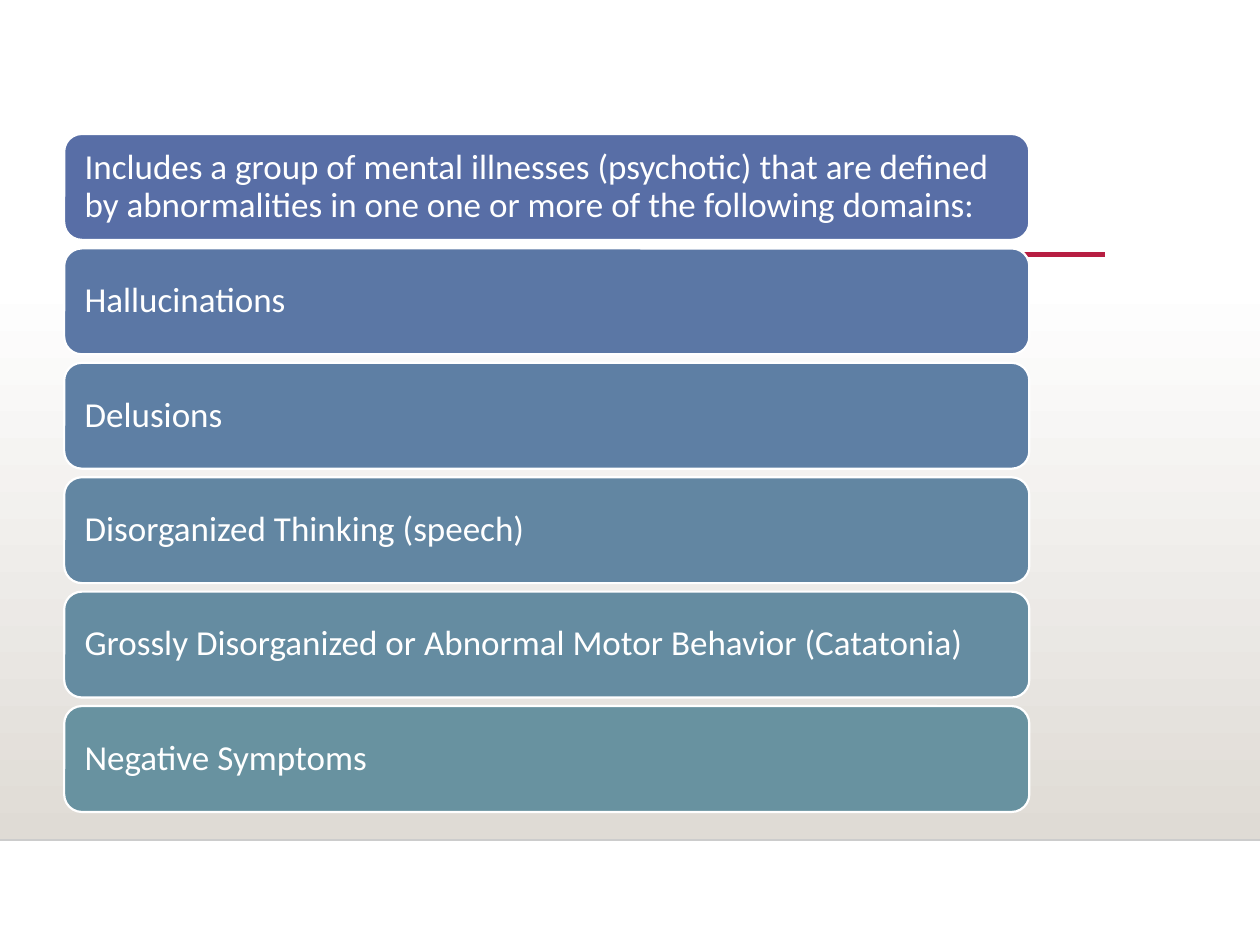
"""Build a slide that lists the domains of psychotic illness."""
from lxml.etree import SubElement
from pptx import Presentation
from pptx.dml.color import RGBColor
from pptx.enum.shapes import MSO_CONNECTOR, MSO_SHAPE
from pptx.enum.text import MSO_ANCHOR, PP_ALIGN
from pptx.oxml.ns import qn
from pptx.util import Pt

HUES = {
    "white": "FFFFFF", "sand": "DFDBD5", "edge": "CCCCCC", "red": "B71E42",
    "box1": "586EA6", "box2": "5B77A5", "box3": "5E7FA4",
    "box4": "6286A2", "box5": "658CA1", "box6": "6892A0",
}
ITEMS = [
    "Includes a group of mental illnesses (psychotic) that are defined "
    "by abnormalities in one one or more of the following domains:",
    "Hallucinations",
    "Delusions",
    "Disorganized Thinking (speech)",
    "Grossly Disorganized or Abnormal Motor Behavior (Catatonia)",
    "Negative Symptoms",
]
LEFT, TOP, WIDTH, HEIGHT, STEP = 36.7, 76.6, 551.5, 60.5, 65.38


def hue(name):
    return RGBColor.from_string(HUES[name])


def write(shape, text, *, size=20, font="Calibri", color="white", inset=8.7):
    frame = shape.text_frame
    frame.word_wrap = True
    frame.vertical_anchor = MSO_ANCHOR.MIDDLE
    frame.margin_left = frame.margin_right = Pt(inset)
    frame.margin_top = frame.margin_bottom = Pt(inset)
    para = frame.paragraphs[0]
    para.alignment = PP_ALIGN.LEFT
    para.line_spacing = 0.9
    run = para.add_run()
    run.text = text
    run.font.size = Pt(size)
    run.font.name = font
    run.font.color.rgb = hue(color)


deck = Presentation()
deck.slide_width, deck.slide_height = Pt(720), Pt(540)
slide = deck.slides.add_slide(deck.slide_layouts[6])
shapes = slide.shapes

floor = shapes.add_shape(MSO_SHAPE.RECTANGLE, Pt(0), Pt(158.6), Pt(720), Pt(321.4))
floor.shadow.inherit = False
floor.line.fill.background()
floor.fill.gradient()
floor.fill.gradient_angle = 270
for stop, name in zip(floor.fill.gradient_stops, ("white", "sand")):
    stop.color.rgb = hue(name)

for start, end, y, name, weight in (
    (0, 720, 480, "edge", 1),
    (113.8, 631.4, 145.4, "red", 2.5),
):
    rule = shapes.add_connector(
        MSO_CONNECTOR.STRAIGHT, Pt(start), Pt(y), Pt(end), Pt(y))
    rule.line.color.rgb = hue(name)
    rule.line.width = Pt(weight)
    SubElement(rule.line._get_or_add_ln().getparent(), qn("a:effectLst"))

for row, text in enumerate(ITEMS):
    box = shapes.add_shape(
        MSO_SHAPE.ROUNDED_RECTANGLE,
        Pt(LEFT), Pt(TOP + row * STEP), Pt(WIDTH), Pt(HEIGHT))
    box.shadow.inherit = False
    box.fill.solid()
    box.fill.fore_color.rgb = hue(f"box{row + 1}")
    box.line.color.rgb = hue("white")
    box.line.width = Pt(1.25)
    write(box, text)

deck.save("out.pptx")
